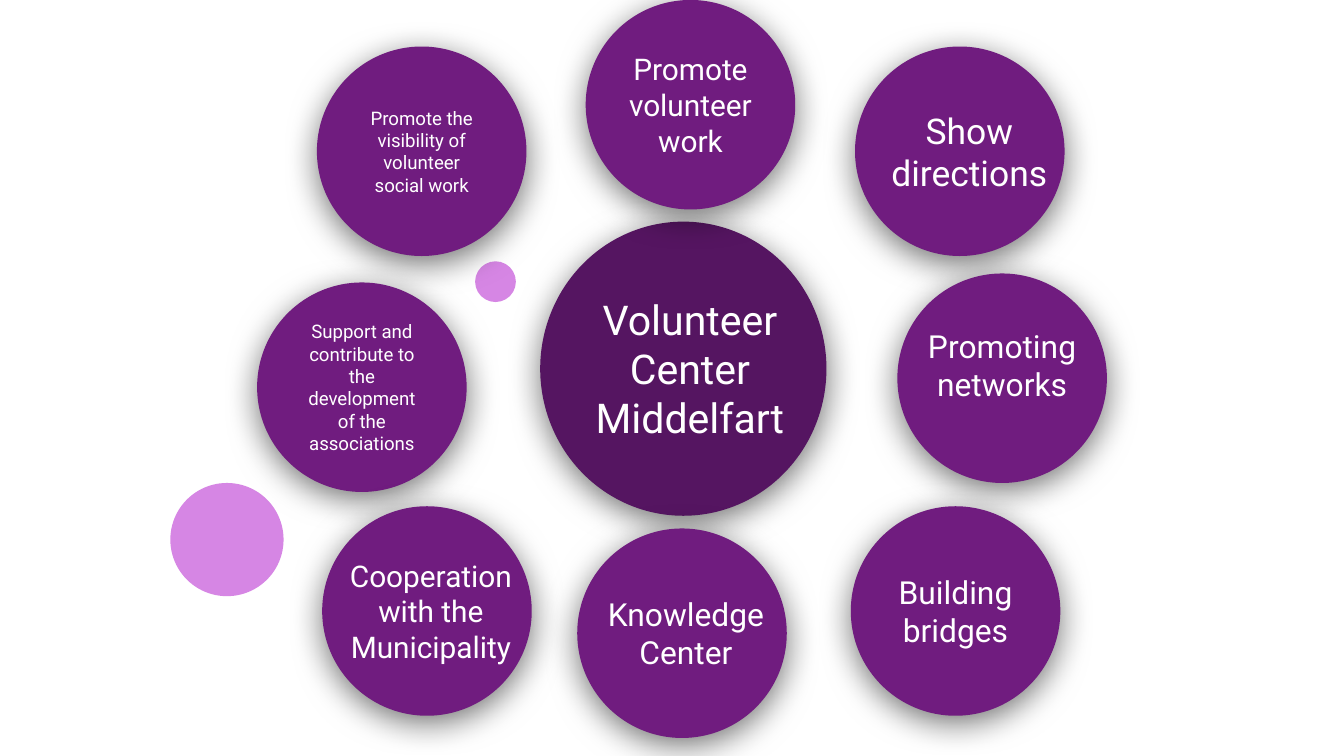
import pptx
import pptx.util
import pptx.dml.color
import pptx.enum.shapes
import pptx.enum.text
import lxml.etree
from pptx.util import Cm

COLORS = {"hub": "551561", "node": "701C7F", "accent": "D686E4",
          "text": "FFFFFF", "shadow": "000000"}
FONT = "Roboto"
NODE_SIZE = 3.96
LABEL_DROP, LABEL_HEIGHT = 0.67, 2.62
NARROW = (0.63, 2.7)
WIDE = (0, 4.11)


class CircleMap:
    """Holds the style and the current slide."""

    def __init__(self, deck):
        self.slide = deck.slides.add_slide(deck.slide_layouts[6])

    def circle(self, shapes, left, top, width, height, color):
        circle = shapes.add_shape(pptx.enum.shapes.MSO_SHAPE.OVAL,
                                  Cm(left), Cm(top), Cm(width), Cm(height))
        circle.shadow.inherit = False
        circle.fill.solid()
        circle.fill.fore_color.rgb = pptx.dml.color.RGBColor.from_string(COLORS[color])
        circle.line.fill.background()
        return circle

    def soft_shadow(self, shape):
        effects = shape._element.spPr.find(pptx.oxml.ns.qn("a:effectLst"))
        shadow = lxml.etree.SubElement(
            effects, pptx.oxml.ns.qn("a:outerShdw"),
            blurRad=str(pptx.util.Pt(18)), dist=str(pptx.util.Pt(4)),
            dir=str(90 * 60000), algn="bl", rotWithShape="0")
        color = lxml.etree.SubElement(shadow, pptx.oxml.ns.qn("a:srgbClr"),
                                      val=COLORS["shadow"])
        lxml.etree.SubElement(color, pptx.oxml.ns.qn("a:alpha"), val="55000")

    def label(self, shapes, left, top, width, height, text, size):
        box = shapes.add_textbox(Cm(left), Cm(top), Cm(width), Cm(height))
        frame = box.text_frame
        frame.word_wrap = True
        frame.vertical_anchor = pptx.enum.text.MSO_ANCHOR.MIDDLE
        frame.margin_left = frame.margin_right = Cm(0.25)
        frame.margin_top = frame.margin_bottom = Cm(0.25)
        frame.text = text
        para = frame.paragraphs[0]
        para.alignment = pptx.enum.text.PP_ALIGN.CENTER
        span = para.runs[0]
        span.font.name = FONT
        span.font.size = pptx.util.Pt(size)
        span.font.color.rgb = pptx.dml.color.RGBColor.from_string(COLORS["text"])

    def bubble(self, circle_area, label_area, color, text, size):
        """A shadowed circle grouped with its label."""
        group = self.slide.shapes.add_group_shape()
        self.soft_shadow(self.circle(group.shapes, *circle_area, color))
        self.label(group.shapes, *label_area, text, size)

    def node(self, left, top, text, size, label_span,
             drop=LABEL_DROP, height=LABEL_HEIGHT):
        shift, width = label_span
        self.bubble((left, top, NODE_SIZE, NODE_SIZE),
                    (left + shift, top + drop, width, height),
                    "node", text, size)


deck = pptx.Presentation()
deck.slide_width, deck.slide_height = Cm(25.4), Cm(14.29)
page = CircleMap(deck)

# Decorative dots
for left, top, size in [(3.22, 9.13, 2.14), (8.98, 4.94, 0.77)]:
    page.circle(page.slide.shapes, left, top, size, size, "accent")

# Centre
page.bubble((10.21, 4.19, 5.41, 5.56), (10.97, 5.64, 4.14, 2.64),
            "hub", "Volunteer Center Middelfart", 22)

# Tasks around the centre
page.node(11.07, 0, "Promote volunteer work", 16, (0, NODE_SIZE))
page.node(5.99, 0.88, "Promote the visibility of volunteer social work", 10, NARROW)
page.node(4.86, 5.34, "Support and contribute to the development of the associations",
          10, NARROW)
page.node(6.09, 9.57, "Cooperation with the Municipality", 16, WIDE)
page.node(16.16, 0.88, "Show directions", 19, (-0.28, 4.88))
page.node(16.96, 5.17, "Promoting networks", 17, (-0.28, 4.52), drop=0.17, height=3.12)
page.node(10.91, 9.99, "Knowledge Center", 17, WIDE)
page.node(16.08, 9.57, "Building bridges", 17, NARROW)

deck.save("out.pptx")
